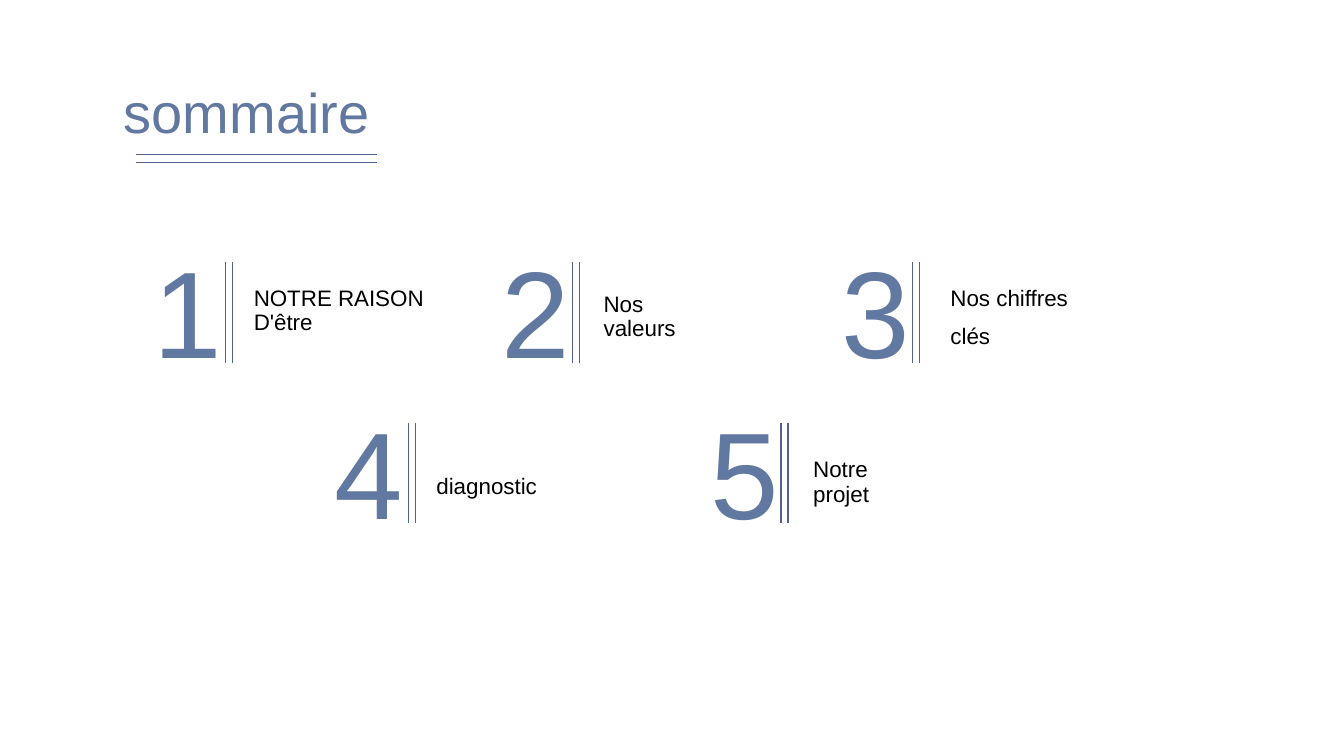
"""Build the "sommaire" slide: a title and five numbered chapters."""
from lxml import etree
from pptx import Presentation
from pptx.dml.color import RGBColor
from pptx.enum.shapes import MSO_CONNECTOR
from pptx.enum.text import MSO_ANCHOR, PP_ALIGN
from pptx.oxml.ns import qn
from pptx.util import Pt

STRAIGHT = MSO_CONNECTOR.STRAIGHT
TOP, MIDDLE = MSO_ANCHOR.TOP, MSO_ANCHOR.MIDDLE
LEFT, RIGHT = PP_ALIGN.LEFT, PP_ALIGN.RIGHT
BLUE = RGBColor(0x61, 0x78, 0xA1)
RULE_BLUE = RGBColor(0x53, 0x61, 0x8E)
BLACK = RGBColor(0, 0, 0)

prs = Presentation()
prs.slide_width, prs.slide_height = Pt(960), Pt(540)
slide = prs.slides.add_slide(prs.slide_layouts[6])


def add_text(lines, x, y, width, height, size, color, align=LEFT, anchor=TOP, inset=7.2):
    frame = slide.shapes.add_textbox(Pt(x), Pt(y), Pt(width), Pt(height)).text_frame
    frame.word_wrap = True
    frame.vertical_anchor = anchor
    frame.margin_left = frame.margin_right = Pt(inset)
    frame.text = lines
    for index, paragraph in enumerate(frame.paragraphs):
        paragraph.alignment = align
        paragraph.line_spacing = 0.9
        if index:
            paragraph.space_before = Pt(10)
        paragraph.font.name = "Arial"
        paragraph.font.size = Pt(size)
        paragraph.font.color.rgb = color


def add_rule(x1, y1, x2, y2):
    rule = slide.shapes.add_connector(STRAIGHT, Pt(x1), Pt(y1), Pt(x2), Pt(y2))
    rule.line.color.rgb = RULE_BLUE
    rule.line.width = Pt(1)
    etree.SubElement(rule._element.spPr, qn("a:effectLst"))


add_text("sommaire", 81.4, 57.6, 616.3, 63.4, 40, BLUE)
for rule_y in (110.2, 115.9):
    add_rule(97.2, rule_y, 269.3, rule_y)

FIRST_ROW, SECOND_ROW = 187.2, 301.9
chapters = [
    ("1", 104.4, 161.3, FIRST_ROW, "NOTRE RAISON D'être", 174.2, 201.6, 166.3),
    ("2", 352.8, 409, FIRST_ROW, "Nos\vvaleurs", 424.1, 205.9, 166.3),
    ("3", 595.4, 651.6, FIRST_ROW, "Nos chiffres\nclés", 671.8, 201.6, 202.3),
    ("4", 233.3, 291.6, SECOND_ROW, "diagnostic", 304.6, 336.2, 202.3),
    ("5", 501.8, 558, SECOND_ROW, "Notre\vprojet", 573.8, 324, 202.3),
]
for number, number_x, rule_x, row_y, label, label_x, label_y, label_width in chapters:
    for x in (rule_x, rule_x + 5):
        add_rule(x, row_y, x, row_y + 72)
    add_text(number, number_x, row_y - 2.2, 45.4, 85, 88, BLUE, RIGHT, MIDDLE, 5.4)
    add_text(label, label_x, label_y, label_width, 25.9, 16, BLACK)

prs.save("out.pptx")
